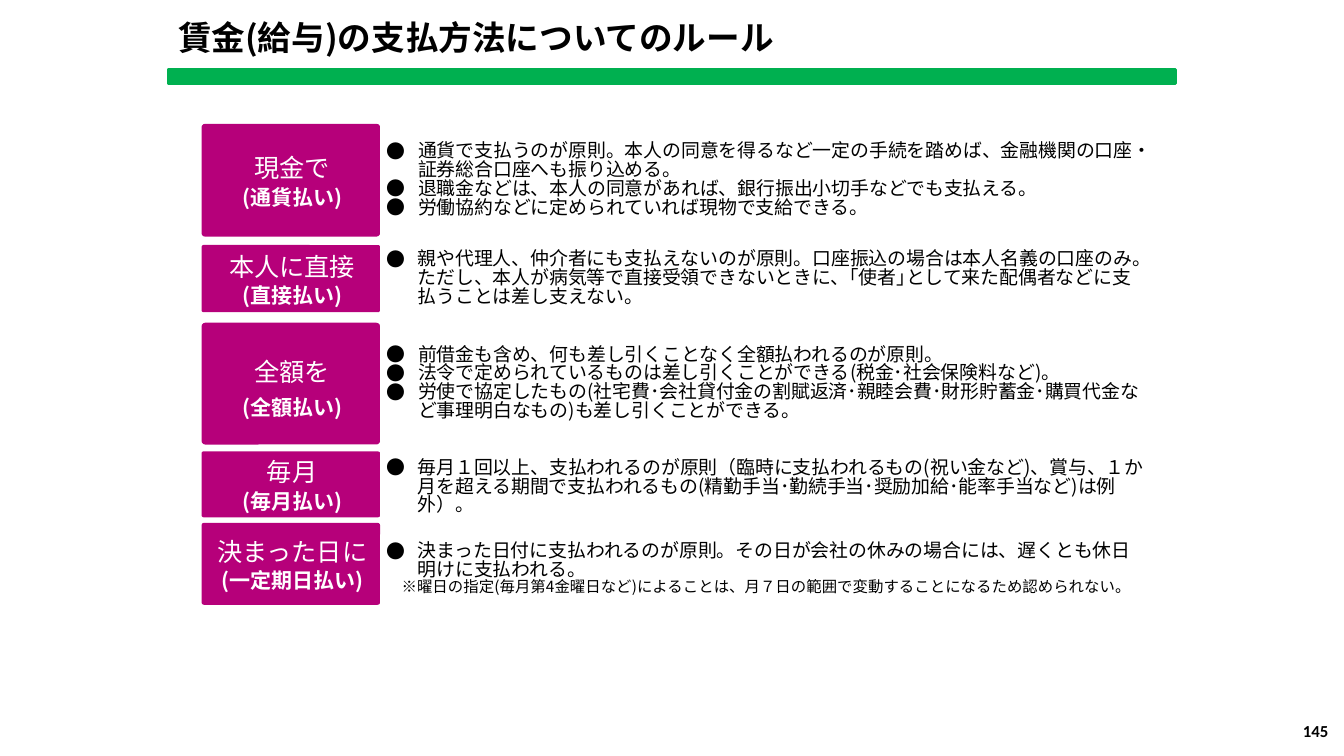
from lxml.etree import SubElement
from pptx import Presentation
from pptx.dml.color import RGBColor
from pptx.enum.shapes import MSO_SHAPE as Shape
from pptx.enum.text import MSO_ANCHOR as Anchor, PP_ALIGN as Align
from pptx.oxml.ns import qn
from pptx.util import Pt

JAPANESE = "Noto Sans CJK JP"
GREEN, MAGENTA, WHITE, BLACK = "00B050", "B6007A", "FFFFFF", "000000"
LABEL_LEFT, LABEL_WIDTH = 144, 127.5
DETAIL_LEFT = LABEL_LEFT + LABEL_WIDTH
DETAIL_WIDTH = 548.5
BULLET_INDENT = 22.5

# Label, payment name, label (top, height), label spacing,
# detail (top, height, width), bullet items, note
RULES = [
    ("現金で", "(通貨払い)", (88.5, 80.5), 1.05, (88.5, 80.5, 561.5),
     ["通貨で支払うのが原則。本人の同意を得るなど一定の手続を踏めば、金融機関の口座・証券総合口座へも振り込める。",
      "退職金などは、本人の同意があれば、銀行振出小切手などでも支払える。",
      "労働協約などに定められていれば現物で支給できる。"], None),
    ("本人に直接", "(直接払い)", (175, 48), 1.05, (174.5, 49.5, DETAIL_WIDTH),
     ["親や代理人、仲介者にも支払えないのが原則。口座振込の場合は本人名義の口座のみ。"
      "ただし、本人が病気等で直接受領できないときに、｢使者｣として来た配偶者などに支払うことは差し支えない。"], None),
    ("全額を", "(全額払い)", (230.5, 87), 1.3, (230.5, 87, DETAIL_WIDTH),
     ["前借金も含め、何も差し引くことなく全額払われるのが原則。",
      "法令で定められているものは差し引くことができる(税金･社会保険料など)。",
      "労使で協定したもの(社宅費･会社貸付金の割賦返済･親睦会費･財形貯蓄金･購買代金など事理明白なもの)"
      "も差し引くことができる。"], None),
    ("毎月", "(毎月払い)", (322.5, 47), 1.05, (321, 54.5, DETAIL_WIDTH),
     ["毎月１回以上、支払われるのが原則（臨時に支払われるもの(祝い金など)、賞与、"
      "１か月を超える期間で支払われるもの(精勤手当･勤続手当･奨励加給･能率手当など)は例外）。"], None),
    ("決まった日に", "(一定期日払い)", (373.5, 58.5), 1.05, (381, 51, DETAIL_WIDTH),
     ["決まった日付に支払われるのが原則。その日が会社の休みの場合には、遅くとも休日明けに支払われる。"],
     "※曜日の指定(毎月第4金曜日など)によることは、月７日の範囲で変動することになるため認められない。"),
]


def color(code):
    return RGBColor.from_string(code)


def write(frame, text, size, fill=BLACK, bold=False, align=Align.LEFT,
          spacing=1.0, font=JAPANESE, margin=0, indent=0, bullet=None):
    """Fill the frame's empty first paragraph, or append a new one."""
    first = frame.paragraphs[0]
    paragraph = frame.add_paragraph() if first.runs else first
    paragraph.alignment = align
    paragraph.line_spacing = spacing
    paragraph.space_before = paragraph.space_after = Pt(0)
    properties = paragraph._p.get_or_add_pPr()
    properties.set("marL", str(Pt(margin)))
    properties.set("indent", str(Pt(indent)))
    if bullet:
        SubElement(properties, qn("a:buFont"), typeface=font)
        SubElement(properties, qn("a:buChar"), char=bullet)
    run = paragraph.add_run()
    run.text = text
    run.font.size, run.font.bold, run.font.name = Pt(size), bold, font
    run.font.color.rgb = color(fill)
    SubElement(run._r.get_or_add_rPr(), qn("a:ea"), typeface=font)


def add_panel(slide, preset, left, top, width, height, fill):
    panel = slide.shapes.add_shape(preset, Pt(left), Pt(top), Pt(width), Pt(height))
    panel.shadow.inherit = False
    panel.fill.solid()
    panel.fill.fore_color.rgb = color(fill)
    panel.line.fill.background()
    return panel


def add_text_panel(slide, left, top, width, height, fill):
    """Add a slightly rounded panel and return its text frame."""
    panel = add_panel(slide, Shape.ROUNDED_RECTANGLE, left, top, width, height, fill)
    panel.adjustments[0] = 0.03
    frame = panel.text_frame
    frame.word_wrap = True
    frame.vertical_anchor = Anchor.MIDDLE
    frame.margin_left = Pt(4)
    frame.margin_top = frame.margin_right = frame.margin_bottom = Pt(2)
    return frame


def add_label(slide, left, top, width, height, label, payment, spacing):
    frame = add_text_panel(slide, left, top, width, height, MAGENTA)
    style = dict(fill=WHITE, align=Align.CENTER, spacing=spacing)
    write(frame, label, 18, **style)
    write(frame, payment, 15, bold=True, **style)


def add_detail(slide, left, top, width, height, items, note):
    frame = add_text_panel(slide, left, top, width, height, WHITE)
    for item in items:
        write(frame, item, 13.5, spacing=0.83, margin=BULLET_INDENT,
              indent=-BULLET_INDENT, bullet="●")
    if note:
        write(frame, note, 11, spacing=0.83, margin=13, indent=-2)


def add_heading(slide, left, top, width, height):
    title = slide.shapes.title
    title.left, title.top, title.width, title.height = (
        Pt(left), Pt(top), Pt(638), Pt(height))
    title.text_frame.vertical_anchor = Anchor.MIDDLE
    write(title.text_frame, "賃金(給与)の支払方法についてのルール", 24, bold=True)
    rule = add_panel(slide, Shape.RECTANGLE, left, top + 41, width, 10.5, GREEN)
    rule.line.color.rgb = color(GREEN)
    rule.line.width = Pt(2)


def add_page_number(slide, left, top, width, height):
    page = slide.shapes.add_textbox(Pt(left), Pt(top), Pt(width), Pt(height))
    page.text_frame.word_wrap = True
    write(page.text_frame, "145", 12, bold=True, align=Align.RIGHT, font="Calibri")


def main():
    deck = Presentation()
    deck.slide_width, deck.slide_height = Pt(960), Pt(540)
    slide = deck.slides.add_slide(deck.slide_layouts[5])
    add_heading(slide, 120, 8.5, 720, 36)
    for label, payment, label_box, spacing, detail_box, items, note in RULES:
        top, height = label_box
        add_label(slide, LABEL_LEFT, top, LABEL_WIDTH, height, label, payment, spacing)
        top, height, width = detail_box
        add_detail(slide, DETAIL_LEFT, top, width, height, items, note)
    add_page_number(slide, 732, 511, 224, 29)
    deck.save("out.pptx")


if __name__ == "__main__":
    main()
